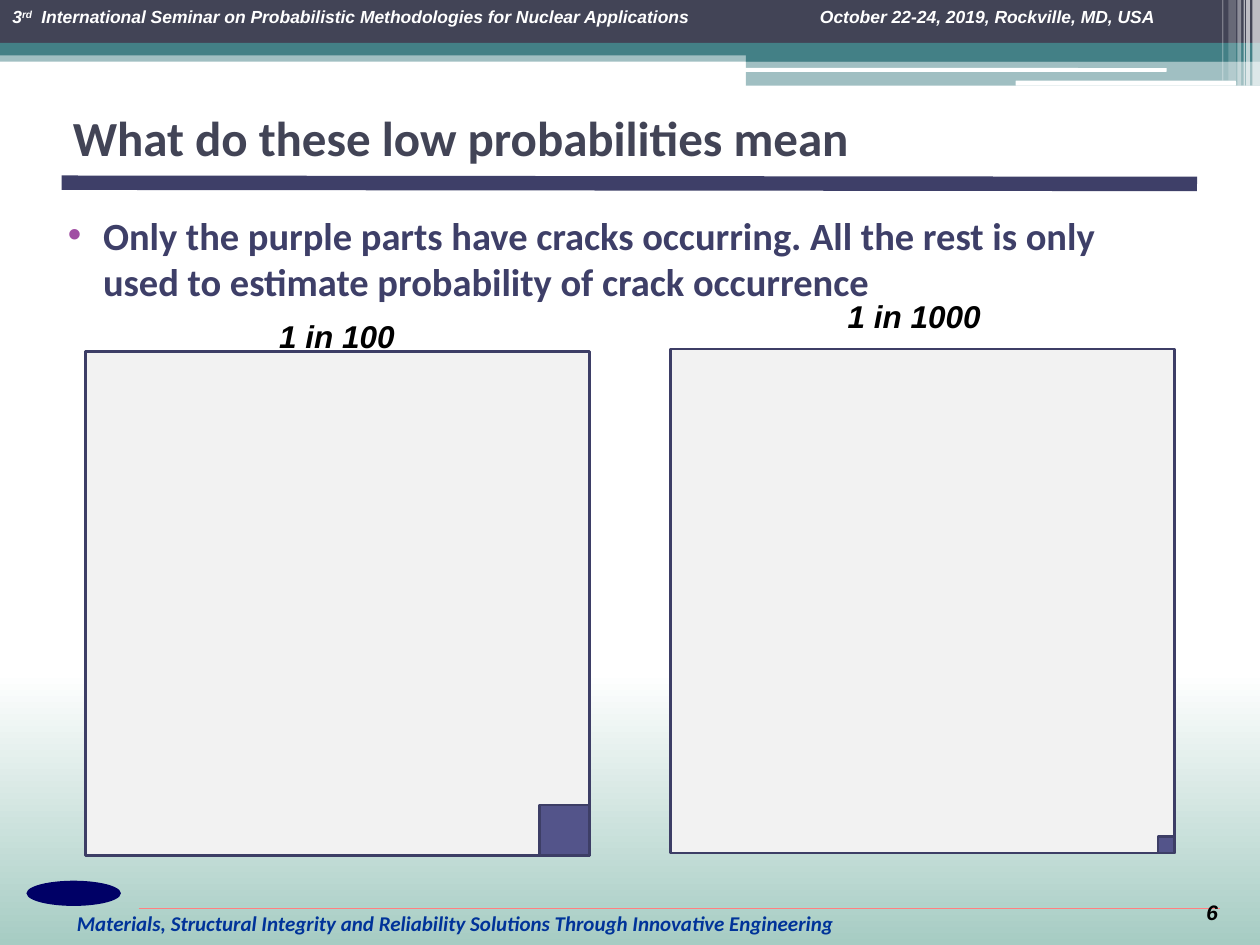
import pptx
import pptx.util
import pptx.dml.color
import pptx.enum.shapes
import pptx.enum.text
import pptx.oxml.ns
from lxml import etree

Inches, Pt = pptx.util.Inches, pptx.util.Pt
SHAPES = pptx.enum.shapes.MSO_SHAPE
ALIGN = pptx.enum.text.PP_ALIGN
ANCHOR = pptx.enum.text.MSO_ANCHOR
qn = pptx.oxml.ns.qn

COLORS = {
    "white": "FFFFFF", "black": "000000", "slate": "424456", "teal": "438086",
    "mint": "A6CCC3", "navy": "3E3F68", "outline": "3D3E66", "purple": "53548A",
    "square": "F2F2F2", "bullet": "A04DA3", "motto": "003399", "mark": "000066",
    "rose": "FF8080",
}


def rgb(name):
    return pptx.dml.color.RGBColor.from_string(COLORS[name])


def add_block(page, left, top, width, height, color, opacity=100,
              kind=SHAPES.RECTANGLE, outline=None):
    block = page.shapes.add_shape(
        kind, Inches(left), Inches(top), Inches(width), Inches(height))
    block.shadow.inherit = False
    block.fill.solid()
    block.fill.fore_color.rgb = rgb(color)
    if opacity < 100:
        tone = block.fill._xPr.find(qn("a:solidFill"))[0]
        etree.SubElement(tone, qn("a:alpha"), val=str(opacity * 1000))
    if outline:
        block.line.color.rgb = rgb(outline)
        block.line.width = Pt(1.5)
    else:
        block.line.fill.background()
    return block


def add_line(page, start, end, color, width):
    line = page.shapes.add_connector(
        pptx.enum.shapes.MSO_CONNECTOR.STRAIGHT,
        *(Inches(value) for value in (*start, *end)))
    line.line.color.rgb = rgb(color)
    line.line.width = Pt(width)
    etree.SubElement(line._element.spPr, qn("a:effectLst"))


def add_text(page, left, top, width, height, text, size, color, font="Arial",
             italic=True, align=ALIGN.CENTER, anchor=ANCHOR.TOP, wrap=True):
    box = page.shapes.add_textbox(
        Inches(left), Inches(top), Inches(width), Inches(height))
    box.text_frame.word_wrap = wrap
    box.text_frame.vertical_anchor = anchor
    para = box.text_frame.paragraphs[0]
    para.text = text
    para.alignment = align
    para.font.name, para.font.size = font, Pt(size)
    para.font.bold, para.font.italic = True, italic
    para.font.color.rgb = rgb(color)
    return para


def add_header(page, left, top, width):
    # Bands across the top and the stepped band at the right
    add_block(page, left, top + 0.4, width, 0.09, "teal", 50)
    add_block(page, left, top, width, 0.34, "slate")
    add_block(page, left, top + 0.34, width, 0.1, "teal")
    step = left + 5.92
    add_block(page, step, top + 0.39, width - 5.92, 0.1, "teal")
    add_block(page, step, top + 0.48, width - 5.92, 0.2, "teal", 50)
    for offset, drop, length, height in ((5.91, 0.54, 3.35, 0.03),
                                         (8.06, 0.64, 1.75, 0.04)):
        add_block(page, left + offset, top + drop, length, height, "white",
                  kind=SHAPES.ROUNDED_RECTANGLE)

    # Pale vertical strips: distance from right edge, width, height, opacity
    for inset, strip, height, opacity in (
            (0.06, 0.06, 0.68, 65), (0.11, 0.03, 0.68, 65),
            (0.13, 0.01, 0.68, 60), (0.18, 0.03, 0.68, 40),
            (0.25, 0.06, 0.64, 20), (0.3, 0.01, 0.64, 30)):
        add_block(page, left + width - inset, top, strip, height, "white", opacity)

    # Seminar name and date, set on tab stops
    para = add_text(page, left, top, width - 0.37, 0.27, "3", 10, "white",
                    align=ALIGN.LEFT)
    ordinal = para.add_run()
    ordinal.text = "rd"
    ordinal.font._element.set("baseline", "30000")
    span = para.add_run()
    span.text = ("\tInternational Seminar on Probabilistic Methodologies for "
                 "Nuclear Applications\tOctober 22-24, 2019, Rockville, MD, USA")
    stops = etree.SubElement(para._p.get_or_add_pPr(), qn("a:tabLst"))
    for position in (0.23, 6.41):
        etree.SubElement(stops, qn("a:tab"), pos=str(Inches(position)), algn="l")
    defaults = para._p.pPr.find(qn("a:defRPr"))
    if defaults is not None:
        defaults.addprevious(stops)


def add_footer(page, left, top, width, height):
    # Fading ground
    ground = add_block(page, left, top, width, height, "mint")
    ground.fill.gradient()
    ground.fill.gradient_angle = 270
    for stop, position, color in zip(ground.fill.gradient_stops, (0, 1),
                                     ("white", "mint")):
        stop.position = position
        stop.color.rgb = rgb(color)

    # Emblem, motto, rule and page number
    bottom = top + height
    add_block(page, left + 0.21, bottom - 0.51, 0.75, 0.2, "mark",
              kind=SHAPES.OVAL)
    add_text(page, left + 0.49, bottom - 0.32, 6.25, 0.3,
             "Materials, Structural Integrity and Reliability Solutions "
             "Through Innovative Engineering", 12, "motto", "Calibri", wrap=False)
    add_line(page, (left + 1.1, bottom - 0.29),
             (left + width - 0.32, bottom - 0.29), "rose", 0.75)
    add_text(page, left + width - 0.59, bottom - 0.41, 0.42, 0.41, "6", 12, "black")


def add_heading(page, left, top, width, height):
    add_line(page, (left + 0.01, top + height),
             (left + width + 0.02, top + height + 0.01), "navy", 8.25)
    add_text(page, left, top, width, height, "What do these low probabilities mean",
             28, "slate", "Calibri", italic=False, align=ALIGN.LEFT,
             anchor=ANCHOR.MIDDLE)


def add_body(page, left, top, width, height):
    para = add_text(page, left, top, width, height,
                    "Only the purple parts have cracks occurring. All the rest is "
                    "only used to estimate probability of crack occurrence",
                    22, "navy", "Calibri", italic=False, align=ALIGN.LEFT)
    para.space_before = Pt(3)
    layout = para._p.get_or_add_pPr()
    layout.set("marL", str(Inches(0.4)))
    layout.set("indent", str(Inches(-0.28)))
    tint = etree.Element(qn("a:buClr"))
    etree.SubElement(tint, qn("a:srgbClr"), val=COLORS["bullet"])
    defaults = layout.find(qn("a:defRPr"))
    for part in (tint, etree.Element(qn("a:buFont"), typeface="Arial"),
                 etree.Element(qn("a:buChar"), char="•")):
        if defaults is None:
            layout.append(part)
        else:
            defaults.addprevious(part)


def add_odds(page, left, top, side, part, label, label_left, label_top, label_width):
    """Square whose lower right corner marks the share with cracks."""
    add_block(page, left, top, side, side, "square", outline="outline")
    add_block(page, left + side - part, top + side - part, part, part,
              "purple", outline="outline")
    add_text(page, left + label_left, top + label_top, label_width, 0.4, label,
             18, "black", wrap=False)


def main():
    deck = pptx.Presentation()
    deck.slide_width, deck.slide_height = Inches(10), Inches(7.5)
    page = deck.slides.add_slide(deck.slide_layouts[6])
    add_header(page, 0, 0, 10)
    add_footer(page, 0, 5.33, 10, 2.17)
    add_heading(page, 0.48, 0.73, 9, 0.72)
    add_body(page, 0.32, 1.63, 9, 5.48)
    add_odds(page, 0.68, 2.79, 4, 0.4, "1 in 100", 1.43, -0.32, 1.13)
    add_odds(page, 5.32, 2.77, 4, 0.13, "1 in 1000", 1.3, -0.46, 1.27)
    deck.save("out.pptx")


if __name__ == "__main__":
    main()
